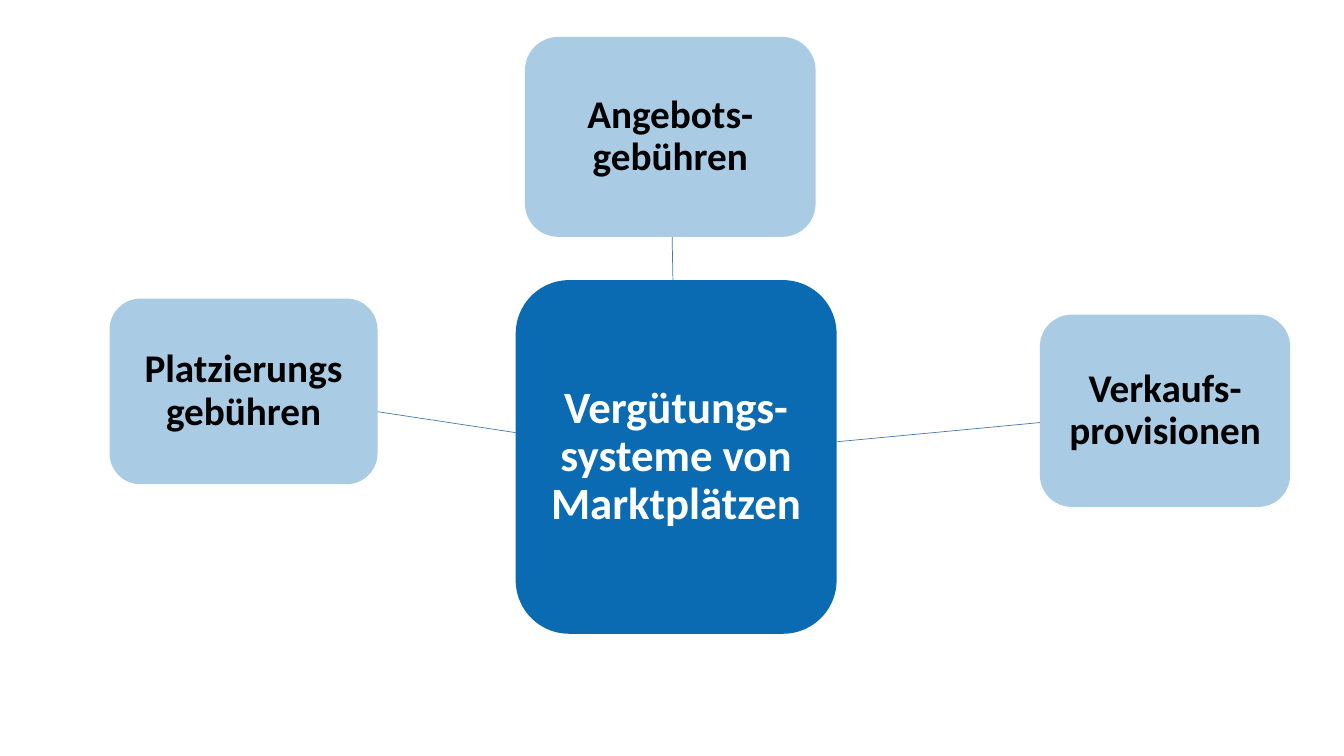
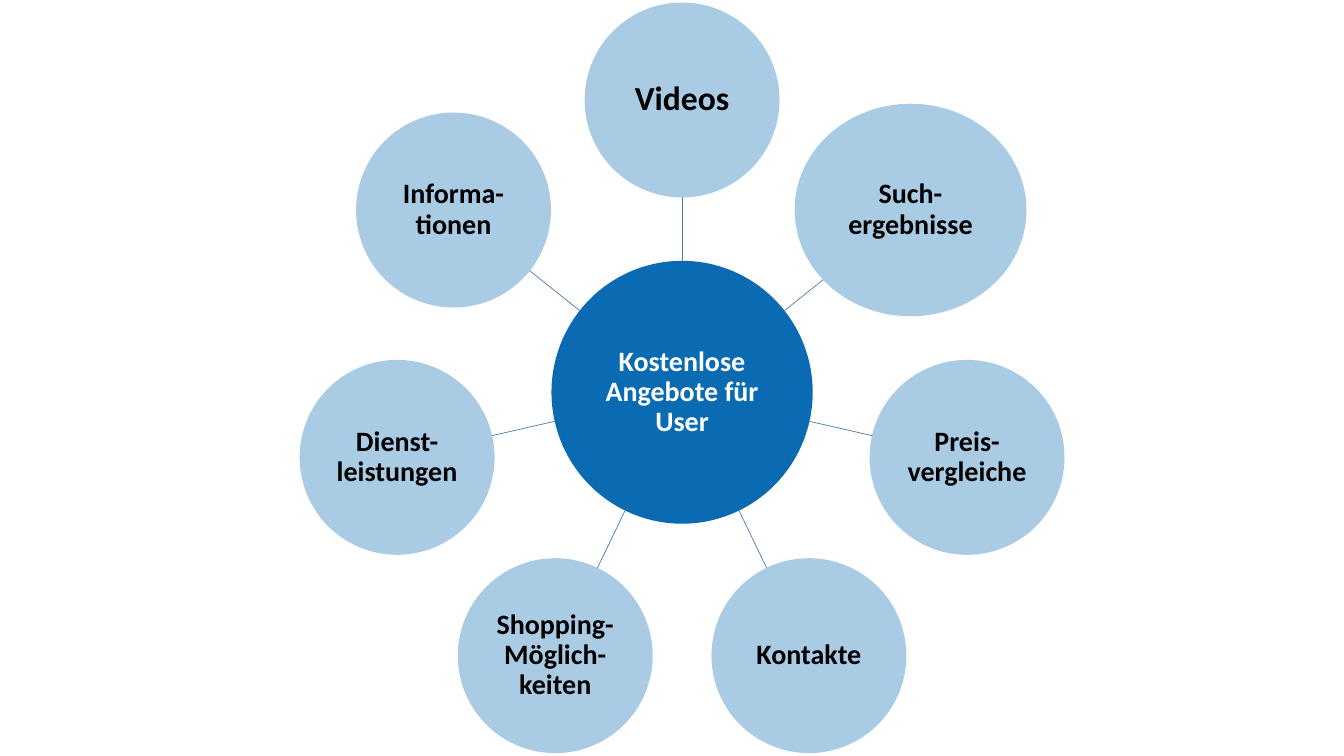
from dataclasses import dataclass
from math import cos, hypot, radians, sin

from lxml.etree import SubElement
from pptx import Presentation
from pptx.dml.color import RGBColor
from pptx.enum.shapes import MSO_CONNECTOR, MSO_SHAPE
from pptx.enum.text import MSO_ANCHOR, PP_ALIGN
from pptx.oxml.ns import qn
from pptx.util import Inches, Pt

# Shared style: the slide is a grid of 160 columns by 90 rows of square cells
COLUMNS, ROWS = 160, 90
CELL = Inches(7.5) // ROWS
FONT = "Calibri"
COLORS = {"blue": "0A6BB2", "line": "497CAB", "dark": "000000", "light": "FFFFFF"}
SATELLITE_OPACITY = 35


@dataclass
class Node:
    text: str
    center: tuple
    extent: tuple
    size: int


def cells(count):
    return round(count * CELL)


def color(name):
    return RGBColor.from_string(COLORS[name])


def write_text(shape, text, *, size, font_color, inset):
    """Write centred bold text into a shape."""
    frame = shape.text_frame
    frame.word_wrap = True
    frame.vertical_anchor = MSO_ANCHOR.MIDDLE
    frame.margin_left = frame.margin_right = cells(inset)
    frame.margin_top = frame.margin_bottom = cells(inset)
    paragraph = frame.paragraphs[0]
    paragraph.alignment = PP_ALIGN.CENTER
    paragraph.line_spacing = 0.9
    run = paragraph.add_run()
    run.text = text
    run.font.name = FONT
    run.font.size = Pt(size)
    run.font.bold = True
    run.font.color.rgb = color(font_color)


class Diagram:
    """A hub with satellites, all drawn with one preset shape."""

    def __init__(self, presentation, preset, inset):
        self.slide = presentation.slides.add_slide(presentation.slide_layouts[6])
        self.preset = preset
        self.inset = inset

    def add_node(self, node, font_color, opacity=100):
        (x, y), (width, height) = node.center, node.extent
        shape = self.slide.shapes.add_shape(
            self.preset, cells(x - width / 2), cells(y - height / 2),
            cells(width), cells(height))
        shape.shadow.inherit = False
        shape.line.fill.background()
        shape.fill.solid()
        shape.fill.fore_color.rgb = color("blue")
        if opacity < 100:
            fill = shape.fill._xPr.find(qn("a:solidFill"))
            SubElement(fill[0], qn("a:alpha")).set("val", str(opacity * 1000))
        write_text(shape, node.text, size=node.size, font_color=font_color,
                   inset=self.inset)

    def edge_point(self, node, target):
        """Point where the line from the node's centre to target leaves it."""
        (x, y), (width, height) = node.center, node.extent
        dx, dy = target[0] - x, target[1] - y
        reach_x, reach_y = abs(dx) * 2 / width, abs(dy) * 2 / height
        measure = hypot if self.preset == MSO_SHAPE.OVAL else max
        share = 1 / measure(reach_x, reach_y)
        return cells(x + dx * share), cells(y + dy * share)

    def add_link(self, hub, node):
        start = self.edge_point(hub, node.center)
        end = self.edge_point(node, hub.center)
        connector = self.slide.shapes.add_connector(
            MSO_CONNECTOR.STRAIGHT, *start, *end)
        connector.line.color.rgb = color("line")
        connector.line.width = Pt(0.5)
        SubElement(connector._element.spPr, qn("a:effectLst"))

    def add_hub(self, hub, satellites):
        self.add_node(hub, "light")
        for satellite in satellites:
            self.add_link(hub, satellite)
            self.add_node(satellite, "dark", SATELLITE_OPACITY)


def ring(center, radius, items):
    """Place satellites clockwise at equal angles, starting at the top."""
    nodes = []
    for index, (text, extent, size) in enumerate(items):
        angle = radians(index * 360 / len(items) - 90)
        position = (center[0] + radius * cos(angle),
                    center[1] + radius * sin(angle))
        nodes.append(Node(text, position, extent, size))
    return nodes


def main():
    presentation = Presentation()
    presentation.slide_width = cells(COLUMNS)
    presentation.slide_height = cells(ROWS)

    # Fees of marketplaces
    Diagram(presentation, MSO_SHAPE.ROUNDED_RECTANGLE, inset=1).add_hub(
        Node("Vergütungs-systeme von Marktplätzen", (80.5, 54.4), (38.2, 42.1), 32),
        [
            Node("Angebots-gebühren", (79.8, 16.3), (34.6, 23.8), 28),
            Node("Verkaufs-provisionen", (138.7, 48.9), (29.8, 22.9), 28),
            Node("Platzierungs gebühren", (29, 46.6), (31.9, 22.1), 28),
        ])

    # Free offers for users
    center = (81.2, 46.7)
    circle = (23.2, 23.2)
    offers = [
        ("Videos", circle, 24),
        ("Such-ergebnisse", (27.6, 25.3), 20),
        ("Preis-vergleiche", circle, 20),
        ("Kontakte", circle, 20),
        ("Shopping-Möglich-keiten", circle, 20),
        ("Dienst-leistungen", circle, 20),
        ("Informa-tionen", circle, 20),
    ]
    Diagram(presentation, MSO_SHAPE.OVAL, inset=0.15).add_hub(
        Node("Kostenlose Angebote für User", center, (31.1, 31.3), 20),
        ring(center, 34.8, offers))

    presentation.save("out.pptx")


if __name__ == "__main__":
    main()
